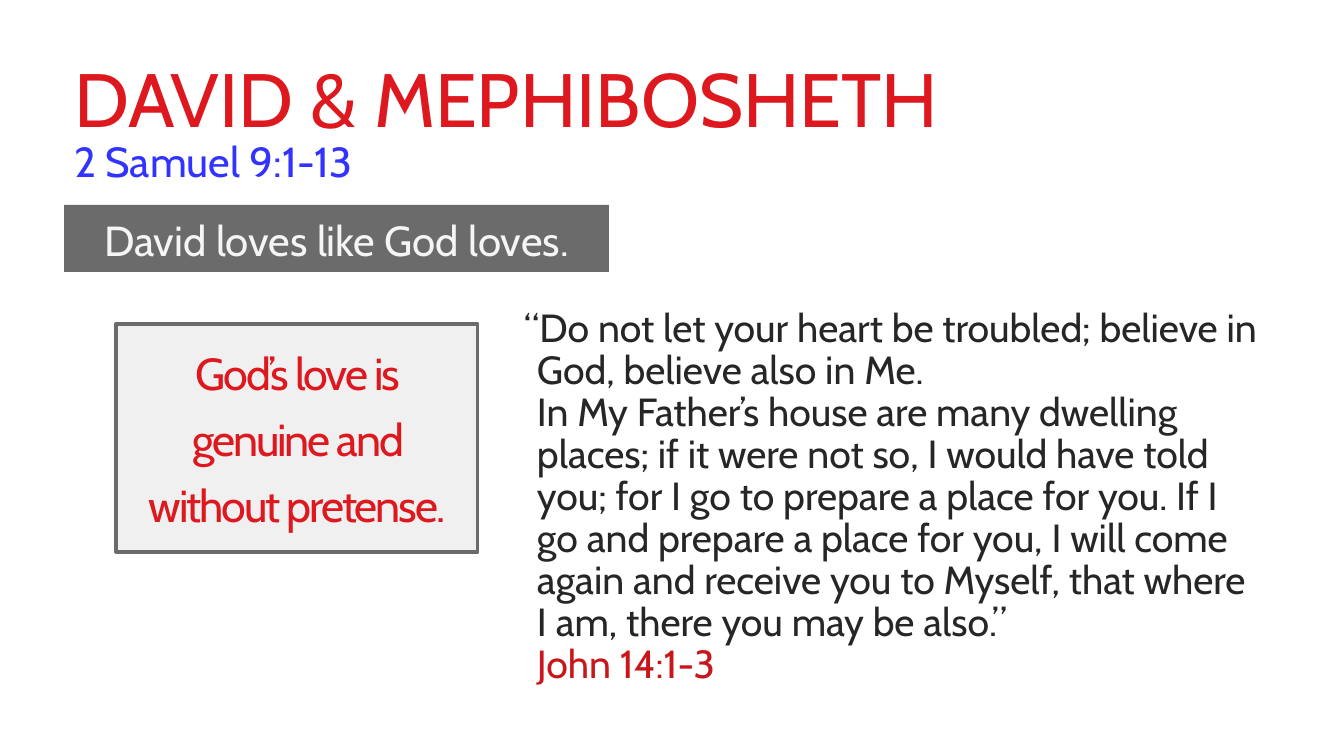
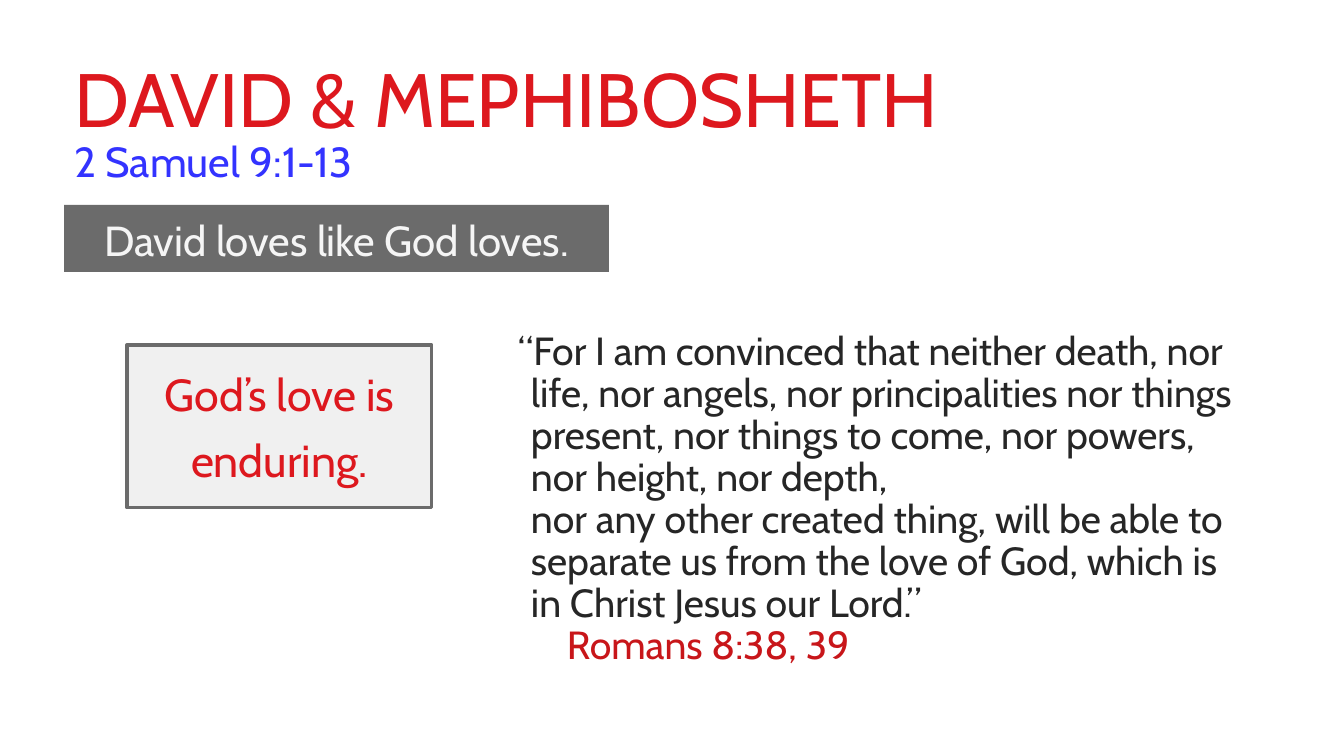
from pptx import Presentation
from pptx.dml.color import RGBColor
from pptx.enum import shapes, text
from pptx.util import Emu, Pt

SCALE = 914400 / 100.8  # EMU in one px
FONT = "Cabin"
COLORS = {
    "red": "DD181E", "blue": "3333FF", "ink": "262626", "cite": "C8161A",
    "bar": "6B6B6B", "light": "F5F5F5", "pale": "F0F0F0",
}


def px(n):
    return Emu(round(n * SCALE))


def rgb(name):
    return RGBColor.from_string(COLORS[name])


class Deck:
    def __init__(self):
        self.prs = Presentation()
        self.prs.slide_width, self.prs.slide_height = px(1344), px(756)
        self.slide = None

    def add(self):
        self.slide = self.prs.slides.add_slide(self.prs.slide_layouts[6])

    def frame(self, shape, top=10):
        """Set margins and wrapping of a shape's text."""
        tf = shape.text_frame
        tf.word_wrap = True
        tf.vertical_anchor = text.MSO_ANCHOR.TOP
        tf.margin_left = tf.margin_right = px(10)
        tf.margin_top, tf.margin_bottom = px(top), px(5)
        return tf

    def para(self, tf, words, size, color, lead=None, left=0, first=0, track=0):
        """Write one paragraph, using the empty first one if there is one."""
        par = tf.paragraphs[0]
        if par.runs:
            par = tf.add_paragraph()
        par.alignment = text.PP_ALIGN.LEFT
        if lead:
            par.line_spacing = Pt(lead)
        if left:
            props = par._p.get_or_add_pPr()
            props.set("marL", str(px(left)))
            props.set("indent", str(px(first)))
        run = par.add_run()
        run.text = words
        run.font.name, run.font.size = FONT, Pt(size)
        run.font.color.rgb = rgb(color)
        if track:
            run._r.get_or_add_rPr().set("spc", str(track))
        return par

    def box(self, at, fill, line=None):
        """Draw a filled rectangle and return its text frame."""
        rect = self.slide.shapes.add_shape(
            shapes.MSO_SHAPE.RECTANGLE, *map(px, at))
        rect.shadow.inherit = False
        rect.fill.solid()
        rect.fill.fore_color.rgb = rgb(fill)
        if line:
            rect.line.color.rgb = rgb(line)
            rect.line.width = Pt(2.25)
        else:
            rect.line.fill.background()
        return self.frame(rect)

    def area(self, at, top=10):
        return self.frame(self.slide.shapes.add_textbox(*map(px, at)), top)

    def head(self):
        """Title, passage and theme bar, the same on every slide."""
        tf = self.area((64, 47, 992, 146), top=5)
        self.para(tf, "DAVID & MEPHIBOSHETH", 54, "red")
        self.para(tf, "2 Samuel 9:1-13", 30, "blue", lead=31)
        tf = self.box((64, 205, 545, 67), "bar")
        par = self.para(tf, "David loves like God loves.", 30, "light", lead=36)
        par.alignment = text.PP_ALIGN.CENTER

    def point(self, at, words, track=0):
        tf = self.box(at, "pale", line="bar")
        par = self.para(tf, words, 32, "red", lead=47, track=track)
        par.alignment = text.PP_ALIGN.CENTER

    def quote(self, at, verses, cite, left=13):
        """Verses with a hanging quote mark, then the reference."""
        tf = self.area(at)
        for i, verse in enumerate(verses):
            self.para(tf, verse, 28, "ink", lead=30, left=13,
                      first=0 if i else -13)
        self.para(tf, cite, 28, "cite", lead=30, left=left)


def main():
    deck = Deck()

    # Genuine love
    deck.add()
    deck.head()
    deck.point((116, 324, 362, 228),
               "God’s love is genuine and without pretense.", track=-150)
    deck.quote((514, 298, 756, 321), [
        "“Do not let your heart be troubled; believe in God, believe also in Me.",
        "In My Father’s house are many dwelling places; if it were not so, "
        "I would have told you; for I go to prepare a place for you. If I go "
        "and prepare a place for you, I will come again and receive you to "
        "Myself, that where I am, there you may be also.”",
    ], "John 14:1-3")

    # Enduring love
    deck.add()
    deck.head()
    deck.point((127, 345, 305, 163), "God’s love is enduring.")
    deck.quote((508, 321, 754, 361), [
        "“For I am convinced that neither death, nor life, nor angels, nor "
        "principalities nor things present, nor things to come, nor powers, "
        "nor height, nor depth,",
        "nor any other created thing, will be able to separate us from the "
        "love of God, which is in Christ Jesus our Lord.”",
    ], "Romans 8:38, 39", left=49)

    deck.prs.save("out.pptx")


if __name__ == "__main__":
    main()
